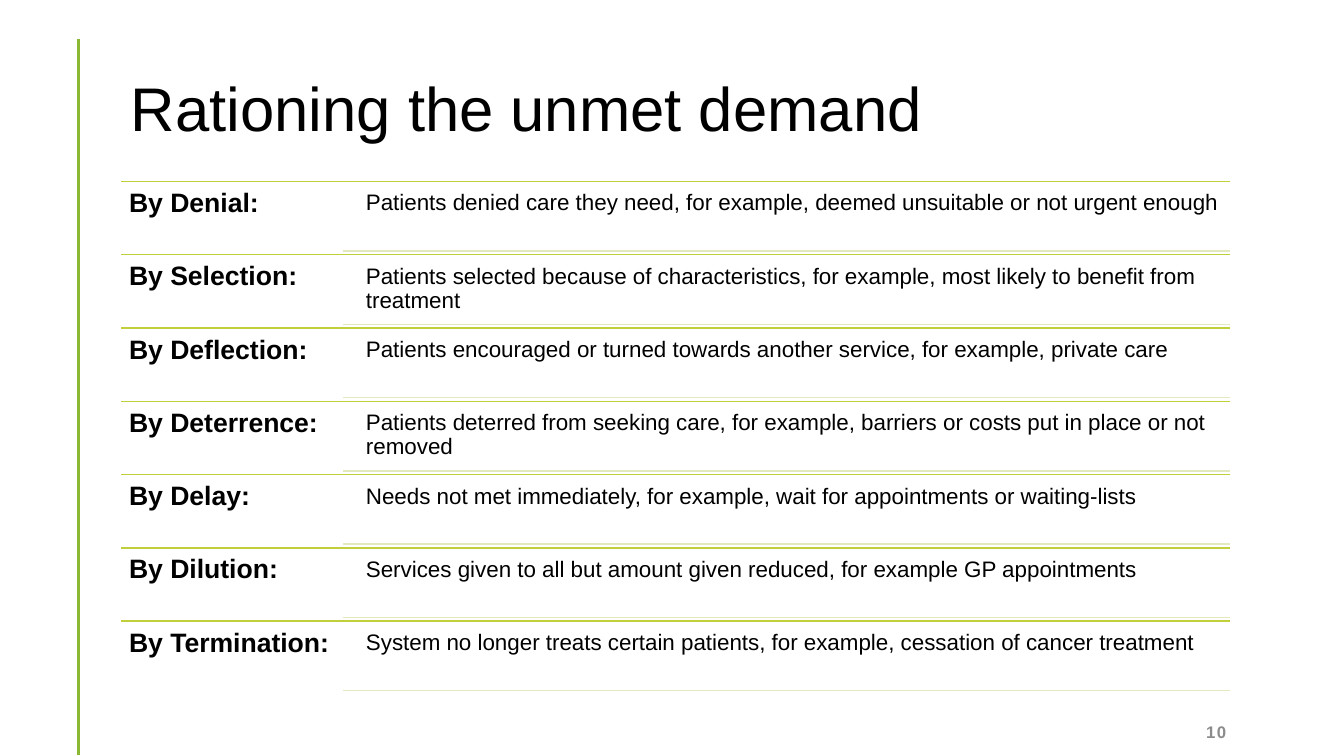
from dataclasses import dataclass

from lxml import etree
from pptx import Presentation
from pptx.dml.color import RGBColor
from pptx.enum.text import MSO_ANCHOR, PP_ALIGN
from pptx.oxml.ns import qn
from pptx.util import Inches, Pt

TOP, MIDDLE = MSO_ANCHOR.TOP, MSO_ANCHOR.MIDDLE
LEFT, RIGHT = PP_ALIGN.LEFT, PP_ALIGN.RIGHT

BLACK = RGBColor(0x00, 0x00, 0x00)
GREY = RGBColor(0x8C, 0x8C, 0x8C)
GREEN = RGBColor(0x8A, 0xB8, 0x33)
LIME = RGBColor(0xC0, 0xCF, 0x3A)
PALE_LIME = RGBColor(0xE2, 0xE9, 0xBF)

FONT = "Arial"

# Row geometry in inches
ROWS_TOP = 1.8
ROWS_HEIGHT = 5.09
ROWS_LEFT = 1.2
ROWS_RIGHT = 12.2
DETAIL_RULE_LEFT = 3.4
DETAIL_LEFT = 3.56
DETAIL_OFFSET = 0.03
DETAIL_HEIGHT = 0.66


@dataclass(frozen=True)
class Method:
    name: str
    detail: str


@dataclass(frozen=True)
class TextStyle:
    size: float
    bold: bool = False
    color: RGBColor = BLACK
    anchor: MSO_ANCHOR = TOP
    align: PP_ALIGN = LEFT
    line_spacing: float = 0.9
    side_inset: float = 0.1
    end_inset: float = 0.05
    tracking: float = 0


TITLE = TextStyle(44, anchor=MIDDLE)
NAME = TextStyle(19, bold=True, side_inset=0.08, end_inset=0.08)
DETAIL = TextStyle(16, side_inset=0.07, end_inset=0.07)
PAGE_NUMBER = TextStyle(12, bold=True, color=GREY, anchor=MIDDLE, align=RIGHT,
                        line_spacing=1, tracking=1)

METHODS = [
    Method("By Denial:", "Patients denied care they need, for example, "
           "deemed unsuitable or not urgent enough"),
    Method("By Selection:", "Patients selected because of characteristics, "
           "for example, most likely to benefit from treatment"),
    Method("By Deflection:", "Patients encouraged or turned towards another "
           "service, for example, private care"),
    Method("By Deterrence:", "Patients deterred from seeking care, for example, "
           "barriers or costs put in place or not removed"),
    Method("By Delay:", "Needs not met immediately, for example, "
           "wait for appointments or waiting-lists"),
    Method("By Dilution:", "Services given to all but amount given reduced, "
           "for example GP appointments"),
    Method("By Termination:", "System no longer treats certain patients, "
           "for example, cessation of cancer treatment"),
]


def add_text(page, text: str, left: float, top: float, width: float,
             height: float, style: TextStyle) -> None:
    box = page.shapes.add_textbox(Inches(left), Inches(top),
                                  Inches(width), Inches(height))
    frame = box.text_frame
    frame.word_wrap = True
    frame.vertical_anchor = style.anchor
    frame.margin_left = frame.margin_right = Inches(style.side_inset)
    frame.margin_top = frame.margin_bottom = Inches(style.end_inset)
    frame.text = text
    para = frame.paragraphs[0]
    para.alignment = style.align
    para.line_spacing = style.line_spacing
    span = para.runs[0]
    span.font.name = FONT
    span.font.size = Pt(style.size)
    span.font.bold = style.bold
    span.font.color.rgb = style.color
    if style.tracking:
        span._r.get_or_add_rPr().set("spc", str(int(style.tracking * 100)))


def add_rule(page, x1: float, y1: float, x2: float, y2: float,
             color: RGBColor, weight: float = 1) -> None:
    straight = 1
    rule = page.shapes.add_connector(straight, Inches(x1), Inches(y1),
                                     Inches(x2), Inches(y2))
    rule.line.color.rgb = color
    rule.line.width = Pt(weight)
    etree.SubElement(rule._element.spPr, qn("a:effectLst"))


def add_method(page, method: Method, top: float, height: float) -> None:
    add_rule(page, ROWS_LEFT, top, ROWS_RIGHT, top, LIME)
    add_text(page, method.name, ROWS_LEFT, top,
             DETAIL_RULE_LEFT - ROWS_LEFT, height, NAME)
    detail_top = top + DETAIL_OFFSET
    detail_bottom = detail_top + DETAIL_HEIGHT
    add_text(page, method.detail, DETAIL_LEFT, detail_top,
             ROWS_RIGHT - DETAIL_LEFT, DETAIL_HEIGHT, DETAIL)
    add_rule(page, DETAIL_RULE_LEFT, detail_bottom,
             ROWS_RIGHT, detail_bottom, PALE_LIME)


def main() -> None:
    deck = Presentation()
    deck.slide_width = Inches(13.33)
    deck.slide_height = Inches(7.5)
    page = deck.slides.add_slide(deck.slide_layouts[6])

    # Side line, title and page number
    add_rule(page, 0.78, 0.39, 0.78, 7.49, GREEN, 2)
    add_text(page, "Rationing the unmet demand", 1.2, 0.31, 11, 1.59, TITLE)
    add_text(page, "10", 10.83, 7.06, 1.43, 0.4, PAGE_NUMBER)

    # Rationing methods in equal rows
    row_height = ROWS_HEIGHT / len(METHODS)
    for index, method in enumerate(METHODS):
        add_method(page, method, ROWS_TOP + index * row_height, row_height)

    deck.save("out.pptx")


if __name__ == "__main__":
    main()
